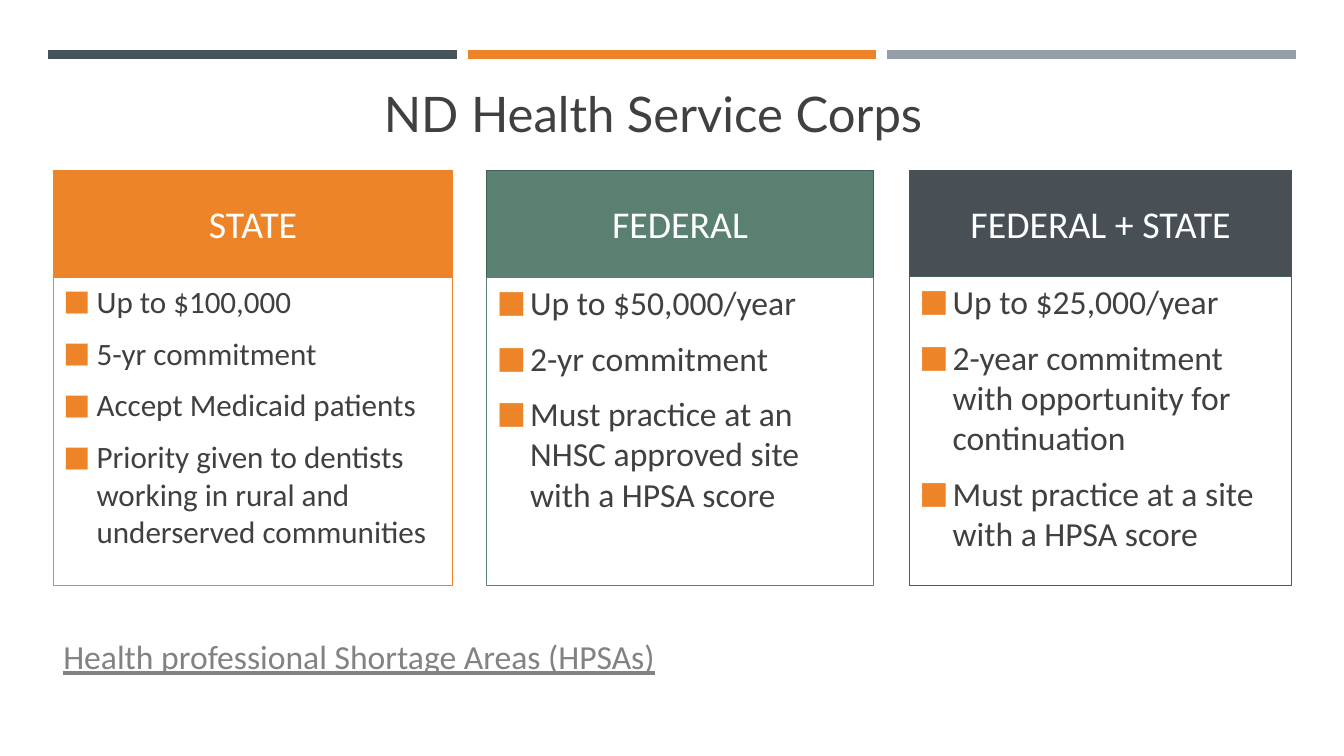
from lxml import etree
from pptx import Presentation
from pptx.dml.color import RGBColor
from pptx.enum import shapes, text
from pptx.oxml.ns import qn
from pptx.util import Inches, Pt

ORANGE = RGBColor(0xED, 0x84, 0x28)
GREEN = RGBColor(0x5A, 0x80, 0x71)
PINE = RGBColor(0x44, 0x60, 0x55)
SLATE = RGBColor(0x46, 0x53, 0x59)
CHAR = RGBColor(0x48, 0x50, 0x56)
GREY = RGBColor(0x96, 0x9F, 0xA7)
INK = RGBColor(0x40, 0x40, 0x40)
LINK = RGBColor(0x82, 0x82, 0x82)
WHITE = RGBColor(0xFF, 0xFF, 0xFF)

# left, width, body top, header fill, header line, body line, size, heading, points
CARDS = [
    (0.53, 3.96, 2.75, ORANGE, ORANGE, ORANGE, 22.2, "STATE",
     ["Up to $100,000", "5-yr commitment", "Accept Medicaid patients",
      "Priority given to dentists working in rural and underserved communities"]),
    (4.83, 3.83, 2.75, GREEN, PINE, GREEN, 24, "FEDERAL",
     ["Up to $50,000/year", "2-yr commitment",
      "Must practice at an NHSC approved site with a HPSA score"]),
    (9.02, 3.79, 2.74, CHAR, SLATE, PINE, 24, "FEDERAL + STATE",
     ["Up to $25,000/year", "2-year commitment with opportunity for continuation",
      "Must practice at a site with a HPSA score"]),
]
HEAD_TOP = 1.69
CARD_END = 5.81


def add_run(para, words, size, color, font="Calibri"):
    run = para.add_run()
    run.text = words
    run.font.name = font
    run.font.size = Pt(size)
    run.font.color.rgb = color
    return run


def add_bar(slide, left, color):
    y = Inches(0.54)
    bar = slide.shapes.add_connector(
        shapes.MSO_CONNECTOR.STRAIGHT, Inches(left), y, Inches(left + 4.05), y)
    bar.line.color.rgb = color
    bar.line.width = Pt(6.5)
    etree.SubElement(bar._element.spPr, qn("a:effectLst"))


def add_label(slide, left, top, width, height):
    frame = slide.shapes.add_textbox(
        Inches(left), Inches(top), Inches(width), Inches(height)).text_frame
    frame.word_wrap = True
    return frame


def add_box(slide, left, top, width, height, line, fill=None):
    box = slide.shapes.add_shape(
        shapes.MSO_SHAPE.RECTANGLE,
        Inches(left), Inches(top), Inches(width), Inches(height))
    box.shadow.inherit = False
    if fill is None:
        box.fill.background()
    else:
        box.fill.solid()
        box.fill.fore_color.rgb = fill
    box.line.color.rgb = line
    box.line.width = Pt(0.75)
    box.text_frame.word_wrap = True
    return box.text_frame


def add_bullet(para):
    props = para._p.get_or_add_pPr()
    props.set("marL", str(Inches(0.33)))
    props.set("indent", str(-Inches(0.33)))
    color = etree.SubElement(props, qn("a:buClr"))
    etree.SubElement(color, qn("a:srgbClr"), val=str(ORANGE))
    etree.SubElement(props, qn("a:buSzPct"), val="92000")
    etree.SubElement(props, qn("a:buFont"), typeface="Calibri")
    etree.SubElement(props, qn("a:buChar"), char="■")


def add_card(slide, left, width, top, fill, edge, line, size, heading, points):
    head = add_box(slide, left, HEAD_TOP, width, top - HEAD_TOP, edge, fill)
    head.vertical_anchor = text.MSO_ANCHOR.MIDDLE
    para = head.paragraphs[0]
    para.alignment = text.PP_ALIGN.CENTER
    add_run(para, heading, 27, WHITE)

    body = add_box(slide, left, top, width, CARD_END - top, line)
    body.vertical_anchor = text.MSO_ANCHOR.TOP
    for i, point in enumerate(points):
        para = body.add_paragraph() if i else body.paragraphs[0]
        para.alignment = text.PP_ALIGN.LEFT
        para.space_before = Pt(round(size * 0.2, 1))
        para.space_after = Pt(6)
        add_bullet(para)
        add_run(para, point, size, INK)


def main():
    prs = Presentation()
    prs.slide_width = Inches(13.33)
    prs.slide_height = Inches(7.5)
    slide = prs.slides.add_slide(prs.slide_layouts[6])

    for i, color in enumerate((SLATE, ORANGE, GREY)):
        add_bar(slide, 0.48 + i * 4.16, color)

    title = add_label(slide, 0.45, 0.73, 12.06, 0.73)
    title.vertical_anchor = text.MSO_ANCHOR.BOTTOM
    title.paragraphs[0].alignment = text.PP_ALIGN.CENTER
    add_run(title.paragraphs[0], "ND Health Service Corps", 35, INK, "Lato")

    for card in CARDS:
        add_card(slide, *card)

    note = add_label(slide, 0.53, 6.26, 12.06, 0.5)
    run = add_run(note.paragraphs[0],
                  "Health professional Shortage Areas (HPSAs)", 24, LINK)
    run.font.underline = True

    prs.save("out.pptx")


if __name__ == "__main__":
    main()
